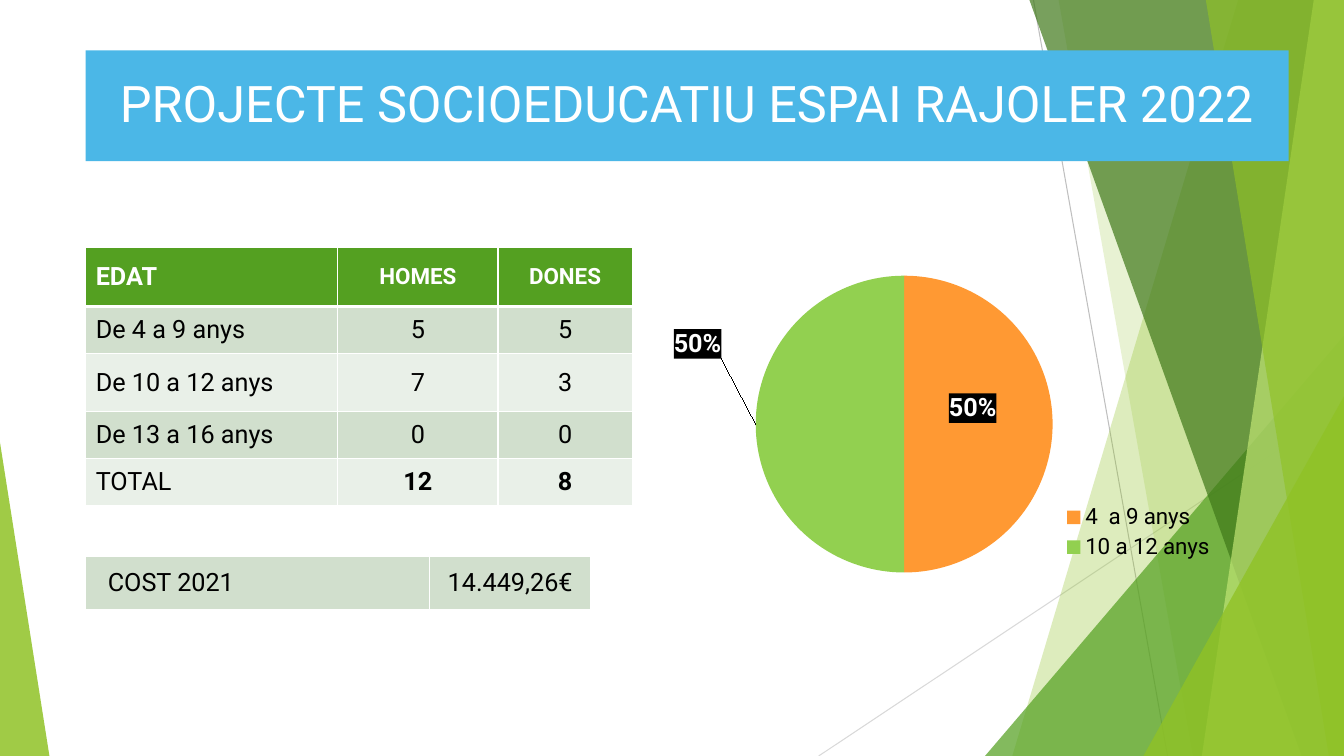
from pptx import Presentation
from pptx.chart.data import CategoryChartData
from pptx.dml.color import RGBColor
from pptx.enum.chart import XL_CHART_TYPE, XL_LABEL_POSITION, XL_LEGEND_POSITION
from pptx.enum.shapes import MSO_CONNECTOR, MSO_SHAPE
from pptx.enum.text import MSO_ANCHOR, PP_ALIGN
from pptx.oxml import parse_xml
from pptx.oxml.ns import nsdecls, qn
from pptx.util import Inches, Pt

FONT = "Roboto"
WHITE, BLACK = "FFFFFF", "000000"
GREEN, LIME = "54A021", "90C226"
BANDS = ["D1DFCD", "E9F0E8"]


def color(code):
    return RGBColor.from_string(code)


def paint(shape, code, alpha=100):
    shape.shadow.inherit = False
    shape.fill.solid()
    shape.fill.fore_color.rgb = color(code)
    shape.line.fill.background()
    if alpha < 100:
        tint = shape.fill._xPr.find(".//" + qn("a:srgbClr"))
        tint.append(parse_xml(f'<a:alpha {nsdecls("a")} val="{alpha * 1000}"/>'))


def style(font, size, code, bold=False):
    font.name, font.size, font.bold = FONT, Pt(size), bold
    font.color.rgb = color(code)


# Green facets at the slide's edges
def add_line(slide, start, end, code):
    line = slide.shapes.add_connector(
        MSO_CONNECTOR.STRAIGHT, *map(Inches, start + end))
    line.line.color.rgb = color(code)
    line.line.width = Pt(0.75)
    line.element.spPr.append(parse_xml(f'<a:effectLst {nsdecls("a")}/>'))


def add_facet(slide, right, top, foot, code, alpha):
    build = slide.shapes.build_freeform(Inches(top), 0)
    edge = [(right, 0), (right, 7.5), (foot, 7.5)]
    build.add_line_segments([(Inches(x), Inches(y)) for x, y in edge])
    paint(build.convert_to_shape(), code, alpha)


def add_wedge(slide, left, top, width, lean, code, alpha):
    wedge = slide.shapes.add_shape(
        MSO_SHAPE.ISOSCELES_TRIANGLE,
        *map(Inches, (left, top, width, 7.5 - top)))
    wedge.adjustments[0] = lean
    paint(wedge, code, alpha)


def add_decor(slide, right):
    add_line(slide, (10.25, 0), (11.58, 7.5), "BFBFBF")
    add_line(slide, (right, 4.03), (8.12, 7.5), "D9D9D9")
    add_facet(slide, right, 12.28, 10.04, LIME, 30)
    add_facet(slide, right, 10.5, 11.83, LIME, 20)
    add_wedge(slide, right - 3.56, 3.33, 3.56, 1, GREEN, 72)
    add_facet(slide, right, 10.21, 12.91, "3F7819", 70)
    add_facet(slide, right, 13.03, 11.92, "C0E474", 70)
    add_facet(slide, right, 11.96, 13.18, LIME, 65)
    add_wedge(slide, right - 1.99, 3.93, 1.99, 1, LIME, 80)
    add_wedge(slide, 0, 4.39, 0.49, 0, LIME, 85)


# Title banner
def add_title(slide, box, text):
    title = slide.shapes.title
    title.left, title.top, title.width, title.height = map(Inches, box)
    title.element.getparent().append(title.element)
    paint(title, "4BB7E7")
    frame = title.text_frame
    frame.text = text
    frame.word_wrap = True
    frame.vertical_anchor = MSO_ANCHOR.MIDDLE
    para = frame.paragraphs[0]
    para.alignment, para.line_spacing = PP_ALIGN.CENTER, 0.9
    style(para.runs[0].font, 36, WHITE)


# Tables
def fill_cell(cell, text, code, size, ink, bold, align, base=1):
    cell.fill.solid()
    cell.fill.fore_color.rgb = color(code)
    cell.vertical_anchor = MSO_ANCHOR.MIDDLE
    cell.text_frame.text = text
    para = cell.text_frame.paragraphs[0]
    para.alignment = align
    style(para.runs[0].font, size, ink, bold)
    props = cell._tc.get_or_add_tcPr()
    for spot, side in enumerate("LRTB"):
        width = Pt(base if side == "B" else 1)
        props.insert(spot, parse_xml(
            f'<a:ln{side} {nsdecls("a")} w="{width}"><a:solidFill>'
            f'<a:srgbClr val="{WHITE}"/></a:solidFill></a:ln{side}>'))


def add_grid(slide, left, top, cols, rows, data, head=True):
    table = slide.shapes.add_table(
        len(rows), len(cols), Inches(left), Inches(top),
        Inches(sum(cols)), Inches(sum(rows))).table
    table.first_row = head
    for col, width in zip(table.columns, cols):
        col.width = Inches(width)
    for r, (row, height) in enumerate(zip(table.rows, rows)):
        row.height = Inches(height)
        for c, cell in enumerate(row.cells):
            align = PP_ALIGN.CENTER if c else PP_ALIGN.LEFT
            if head and r == 0:
                fill_cell(cell, data[r][c], GREEN, 16 if c else 18,
                          WHITE, True, align, 3)
            else:
                total = data[r][0] == "TOTAL" and c > 0
                fill_cell(cell, data[r][c], BANDS[(r - head) % 2], 18,
                          BLACK, total, align)
    return table


# Pie chart by age
def place(x, y, size=""):
    return parse_xml(
        f'<c:layout {nsdecls("c")}><c:manualLayout>{size}'
        f'<c:x val="{x}"/><c:y val="{y}"/></c:manualLayout></c:layout>')


def add_label(point, shift):
    label = point.data_label
    label.position = XL_LABEL_POSITION.CENTER
    node = label._dLbl
    node.find(qn("c:idx")).addnext(place(*shift))
    node.find(qn("c:showVal")).set("val", "0")
    node.find(qn("c:showPercent")).set("val", "1")
    style(label.font, 18, WHITE, True)
    node.find(qn("c:txPr")).addprevious(parse_xml(
        f'<c:spPr {nsdecls("c", "a")}><a:solidFill>'
        f'<a:srgbClr val="{BLACK}"/></a:solidFill></c:spPr>'))


def add_pie(slide, box):
    data = CategoryChartData()
    data.categories = ["4  a 9 anys", "10 a 12 anys", "13 a 16 anys"]
    data.add_series("Series 1", [50, 50, 0])
    chart = slide.shapes.add_chart(
        XL_CHART_TYPE.PIE, *map(Inches, box), data).chart
    chart.has_title = False
    style(chart.font, 18, BLACK)
    plot = chart.plots[0]
    plot.vary_by_categories = True
    points = plot.series[0].points
    for i, code in enumerate(["FF9933", "92D050", "00B0F0"]):
        fill = points[i].format.fill
        fill.solid()
        fill.fore_color.rgb = color(code)
    for i, shift in enumerate([(-0.01, -0.04), (-0.23, -0.2)]):
        add_label(points[i], shift)
    labels = plot.series[0].data_labels
    labels.show_value = False
    labels._element.find(qn("c:showLeaderLines")).set("val", "1")

    # Plot and legend places, without the empty age group
    area = chart._chartSpace.chart.plotArea
    for old in area.findall(qn("c:layout")):
        area.remove(old)
    frame = place(0.12, 0.22, '<c:layoutTarget val="inner"/>'
                  '<c:xMode val="edge"/><c:yMode val="edge"/>')
    for side, span in (("w", 0.6), ("h", 0.74)):
        frame[0].append(parse_xml(
            f'<c:{side} {nsdecls("c")} val="{span}"/>'))
    area.insert(0, frame)
    chart.has_legend = True
    legend = chart.legend
    legend.position = XL_LEGEND_POSITION.RIGHT
    legend.include_in_layout = False
    style(legend.font, 16, BLACK)
    spot = legend._element.find(qn("c:legendPos"))
    for old in legend._element.findall(qn("c:layout")):
        legend._element.remove(old)
    spot.addnext(place(0.69, 0.78, '<c:xMode val="edge"/><c:yMode val="edge"/>'))
    spot.addnext(parse_xml(
        f'<c:legendEntry {nsdecls("c")}><c:idx val="2"/>'
        '<c:delete val="1"/></c:legendEntry>'))


def main():
    deck = Presentation()
    deck.slide_width, deck.slide_height = Inches(13.33), Inches(7.5)
    slide = deck.slides.add_slide(deck.slide_layouts[5])
    add_decor(slide, 13.33)
    add_title(slide, (0.85, 0.5, 11.93, 1.1),
              "PROJECTE SOCIOEDUCATIU ESPAI RAJOLER 2022")
    add_grid(slide, 0.85, 2.45, [2.5, 1.59, 1.33],
             [0.59, 0.47, 0.57, 0.47, 0.47],
             [["EDAT", "HOMES", "DONES"],
              ["De 4 a 9 anys", "5", "5"],
              ["De 10 a 12 anys", "7", "3"],
              ["De 13 a 16 anys", "0", "0"],
              ["TOTAL", "12", "8"]])
    add_pie(slide, (6.57, 1.86, 5.71, 3.98))
    cost = add_grid(slide, 0.85, 5.52, [3.41, 1.6], [0.53],
                    [["COST 2021", "14.449,26€"]], head=False)
    cost.cell(0, 0).margin_left = Inches(0.22)
    deck.save("out.pptx")


if __name__ == "__main__":
    main()
